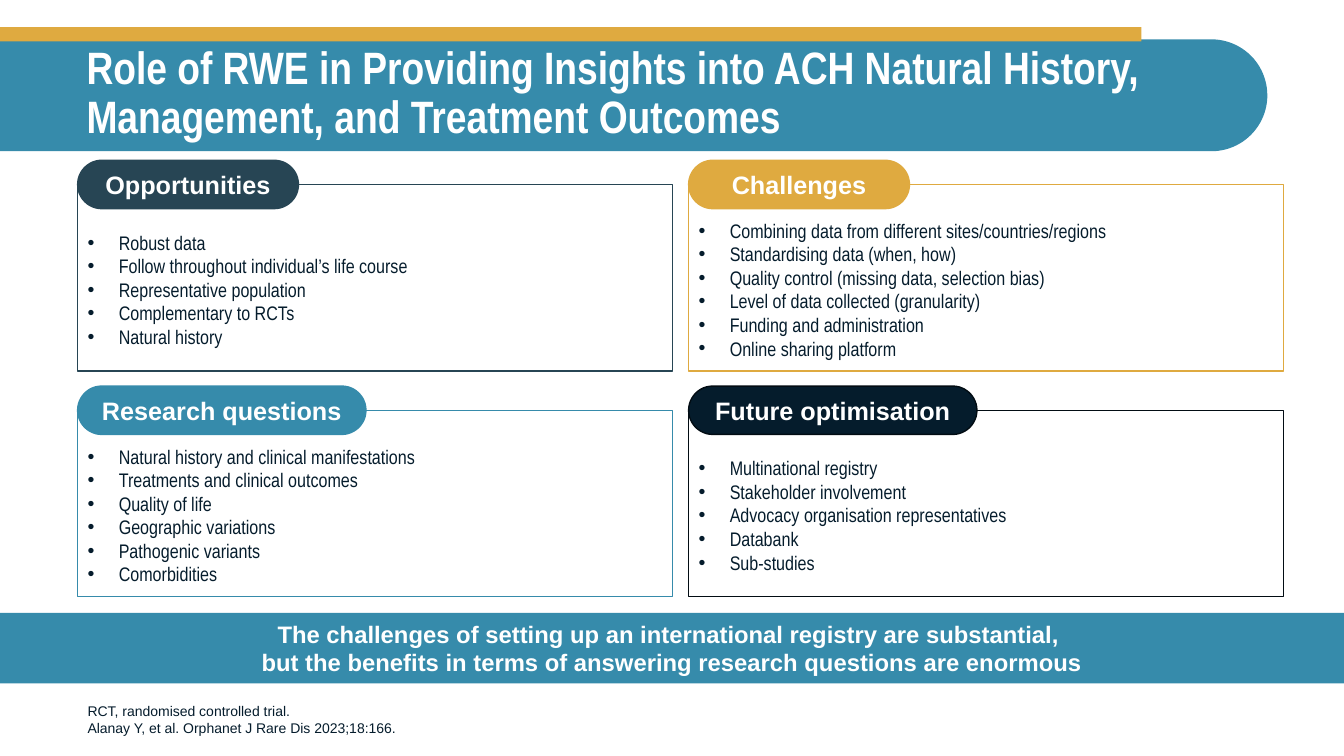
from lxml import etree
from pptx import Presentation
from pptx.dml.color import RGBColor
from pptx.enum.shapes import MSO_SHAPE
from pptx.enum.text import MSO_ANCHOR, PP_ALIGN
from pptx.oxml.ns import qn
from pptx.util import Inches, Pt

RECTANGLE = MSO_SHAPE.RECTANGLE
ROUNDED = MSO_SHAPE.ROUNDED_RECTANGLE
ROUNDED_END = MSO_SHAPE.ROUND_2_SAME_RECTANGLE
MIDDLE, BOTTOM = MSO_ANCHOR.MIDDLE, MSO_ANCHOR.BOTTOM
LEFT, CENTER = PP_ALIGN.LEFT, PP_ALIGN.CENTER

COLORS = {
    "teal": "368BAB",
    "gold": "DFAA40",
    "slate": "274554",
    "navy": "051C2C",
    "black": "020C13",
    "white": "FFFFFF",
}
HEADING_FONT, NARROW_FONT = "Arial", "Arial Narrow"

# Panel grid
GRID_LEFT, GRID_TOP = 0.77, 1.83
COLUMN_STEP, ROW_STEP = 6.06, 2.24
PANEL_WIDTH, PANEL_HEIGHT = 5.9, 1.85
LABEL_HEIGHT = 0.48
LABEL_WIDTHS = (2.19, 2.86)  # one per row

# Row, column, heading, label fill, outline, bullet items
PANELS = [
    (0, 0, "Opportunities", "slate", "slate", [
        "Robust data",
        "Follow throughout individual’s life course",
        "Representative population",
        "Complementary to RCTs",
        "Natural history",
    ]),
    (0, 1, "Challenges", "gold", "gold", [
        "Combining data from different sites/countries/regions",
        "Standardising data (when, how)",
        "Quality control (missing data, selection bias)",
        "Level of data collected (granularity)",
        "Funding and administration",
        "Online sharing platform",
    ]),
    (1, 1, "Future optimisation", "navy", "black", [
        "Multinational registry",
        "Stakeholder involvement",
        "Advocacy organisation representatives",
        "Databank",
        "Sub-studies",
    ]),
    (1, 0, "Research questions", "teal", "teal", [
        "Natural history and clinical manifestations",
        "Treatments and clinical outcomes",
        "Quality of life",
        "Geographic variations",
        "Pathogenic variants",
        "Comorbidities",
    ]),
]


def color(name):
    return RGBColor.from_string(COLORS[name])


def add_box(slide, kind, left, top, width, height, fill=None, line=None):
    shape = slide.shapes.add_shape(
        kind, Inches(left), Inches(top), Inches(width), Inches(height))
    shape.shadow.inherit = False
    if fill:
        shape.fill.solid()
        shape.fill.fore_color.rgb = color(fill)
    else:
        shape.fill.background()
    if line:
        shape.line.color.rgb = color(line)
        shape.line.width = Pt(1)
    else:
        shape.line.fill.background()
    return shape


def add_run(paragraph, text, size, font, fill, bold=False):
    run = paragraph.add_run()
    run.text = text
    run.font.size = Pt(size)
    run.font.name = font
    run.font.bold = bold
    run.font.color.rgb = color(fill)


def prepare_frame(shape, anchor=MIDDLE):
    frame = shape.text_frame
    frame.word_wrap = True
    frame.vertical_anchor = anchor
    return frame


def add_paragraphs(frame, lines, alignment, *style):
    for index, line in enumerate(lines):
        paragraph = frame.paragraphs[0] if index == 0 else frame.add_paragraph()
        paragraph.alignment = alignment
        add_run(paragraph, line, *style)


def add_text(slide, left, top, width, height, anchor):
    box = slide.shapes.add_textbox(
        Inches(left), Inches(top), Inches(width), Inches(height))
    return prepare_frame(box, anchor)


def set_bullet(paragraph):
    properties = paragraph._p.get_or_add_pPr()
    properties.set("marL", str(Inches(0.31)))
    properties.set("indent", str(Inches(-0.31)))
    etree.SubElement(properties, qn("a:buFont")).set("typeface", "Arial")
    etree.SubElement(properties, qn("a:buChar")).set("char", "•")


def add_panel(slide, row, column, heading, fill, line, items):
    left = GRID_LEFT + column * COLUMN_STEP
    top = GRID_TOP + row * ROW_STEP

    # Outlined panel with its list, set below the label
    panel = add_box(slide, ROUNDED, left, top, PANEL_WIDTH, PANEL_HEIGHT, line=line)
    panel.adjustments[0] = 0
    frame = prepare_frame(panel)
    frame.margin_top = Inches(0.28)
    add_paragraphs(frame, items, LEFT, 14, NARROW_FONT, "navy")
    for paragraph in frame.paragraphs:
        set_bullet(paragraph)

    # Label centred on the panel's top edge
    label = add_box(slide, ROUNDED, left, top - LABEL_HEIGHT / 2,
                    LABEL_WIDTHS[row], LABEL_HEIGHT, fill, line)
    label.adjustments[0] = 0.5
    add_paragraphs(prepare_frame(label), [heading], CENTER,
                   18, HEADING_FONT, "white", True)


def add_header(slide):
    # Band turned on its side so that its round end points right
    band = add_box(slide, ROUNDED_END, 5.73, -5.34, 1.11, 12.57, "teal")
    band.adjustments[0] = 0
    band.adjustments[1] = 0.5
    band.rotation = 270
    add_box(slide, RECTANGLE, 0, 0.27, 11.32, 0.14, "gold")

    frame = add_text(slide, 0.76, 0.39, 11.81, 1.1, MIDDLE)
    title = ("Role of RWE in Providing Insights into ACH Natural History, "
             "Management, and Treatment Outcomes")
    add_paragraphs(frame, [title], LEFT, 32.4, NARROW_FONT, "white", True)
    frame.paragraphs[0].line_spacing = 0.9


def add_conclusion(slide):
    banner = add_box(slide, RECTANGLE, 0, 6.08, 13.33, 0.7, "teal")
    frame = prepare_frame(banner)
    frame.margin_left = frame.margin_right = Inches(0.79)
    paragraph = frame.paragraphs[0]
    paragraph.alignment = CENTER
    style = (17, HEADING_FONT, "white", True)
    add_run(paragraph, "The challenges of setting up an international registry "
            "are substantial, ", *style)
    paragraph.add_line_break()
    add_run(paragraph, "but the benefits in terms of answering research "
            "questions are enormous", *style)


def add_footnotes(slide):
    frame = add_text(slide, 0.77, 6.79, 9.88, 0.56, BOTTOM)
    notes = ["RCT, randomised controlled trial.",
             "Alanay Y, et al. Orphanet J Rare Dis 2023;18:166."]
    add_paragraphs(frame, notes, LEFT, 10, HEADING_FONT, "navy")


def main():
    presentation = Presentation()
    presentation.slide_width = Inches(13.33)
    presentation.slide_height = Inches(7.5)
    slide = presentation.slides.add_slide(presentation.slide_layouts[6])

    add_header(slide)
    add_footnotes(slide)
    add_conclusion(slide)
    for panel in PANELS:
        add_panel(slide, *panel)

    presentation.save("out.pptx")


if __name__ == "__main__":
    main()
